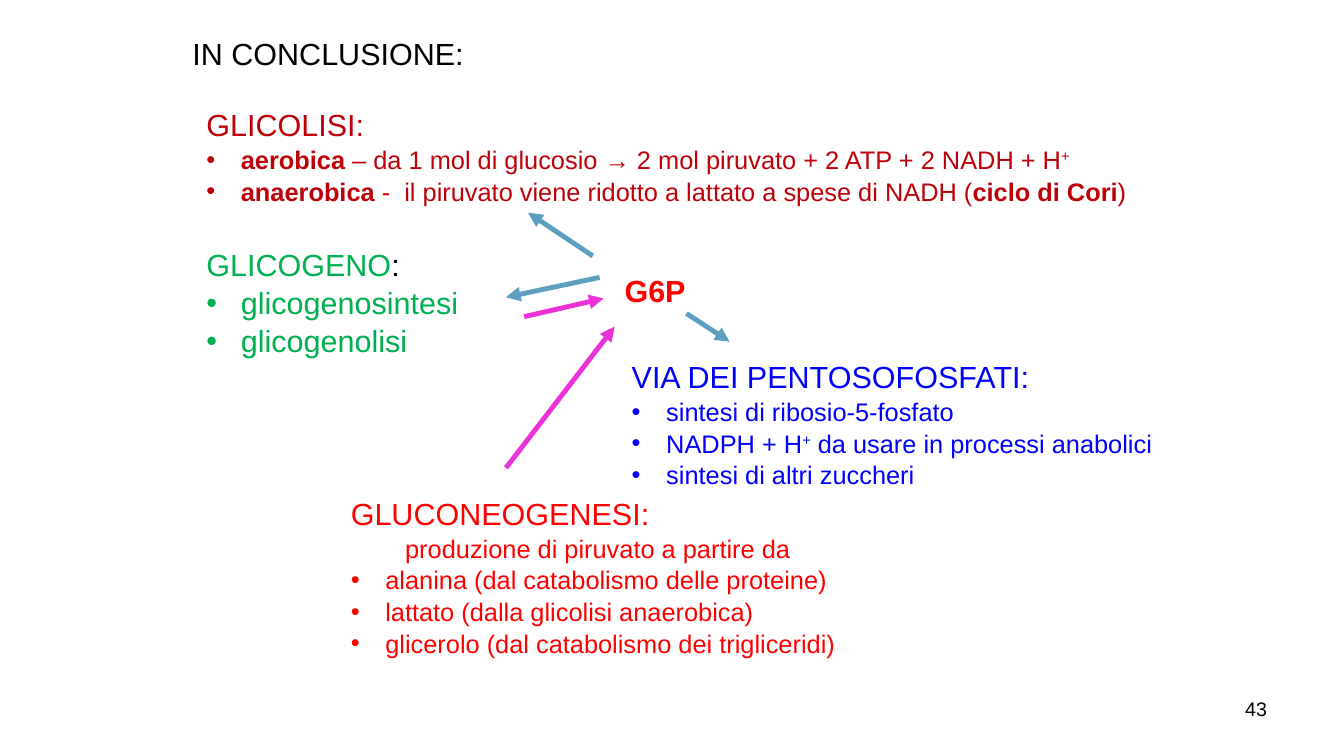
from lxml import etree
from pptx import Presentation
from pptx.dml.color import RGBColor
from pptx.enum.shapes import MSO_CONNECTOR
from pptx.enum.text import MSO_ANCHOR, MSO_AUTO_SIZE, PP_ALIGN
from pptx.oxml.ns import qn
from pptx.util import Cm, Pt

STRAIGHT = MSO_CONNECTOR.STRAIGHT
TOP = MSO_ANCHOR.TOP
NO_AUTOFIT = MSO_AUTO_SIZE.NONE
LEFT, RIGHT = PP_ALIGN.LEFT, PP_ALIGN.RIGHT

BLACK = RGBColor(0x00, 0x00, 0x00)
BLUE = RGBColor(0x00, 0x00, 0xFF)
DARK_RED = RGBColor(0xBE, 0x00, 0x09)
GREEN = RGBColor(0x00, 0xB0, 0x50)
RED = RGBColor(0xFF, 0x00, 0x00)
STEEL_BLUE = RGBColor(0x5C, 0x9F, 0xC0)
MAGENTA = RGBColor(0xEA, 0x32, 0xD8)

COMPARISON_LAYOUT = 4
HEADING_SIZE, LIST_SIZE, NUMBER_SIZE = 21.8, 18.1, 14
BULLET_INDENT = Cm(0.87)
FIRST_LINE_INDENT = Cm(1.37)

FRAME_FORMAT = {
    "word_wrap": True, "auto_size": NO_AUTOFIT, "vertical_anchor": TOP,
    "margin_left": Cm(0.25), "margin_right": Cm(0.25),
    "margin_top": Cm(0.2), "margin_bottom": Cm(0.13),
}
PARAGRAPH_FORMAT = {
    "alignment": LEFT, "line_spacing": 1.04,
    "space_before": Pt(0), "space_after": Pt(0),
}

PATHWAYS = [
    {"box": (4.95, 2.44, 25.45, 2.74), "color": DARK_RED, "size": LIST_SIZE,
     "heading": [("GLICOLISI:", {})],
     "items": [
         [("aerobica", {"bold": True}),
          (" – da 1 mol di glucosio → 2 mol piruvato + 2 ATP + 2 NADH + H", {}),
          ("+", {"superscript": True})],
         [("anaerobica ", {"bold": True}),
          ("-  il piruvato viene ridotto a lattato a spese di NADH (", {}),
          ("ciclo di Cori", {"bold": True}), (")", {})],
     ]},
    {"box": (4.95, 5.97, 7.8, 3.05), "color": GREEN, "size": HEADING_SIZE,
     "heading": [("GLICOGENO", {}), (":", {"color": BLACK})],
     "items": [[("glicogenosintesi", {})], [("glicogenolisi", {})]]},
    {"box": (15.67, 8.79, 13.79, 3.51), "color": BLUE, "size": LIST_SIZE,
     "heading": [("VIA DEI PENTOSOFOSFATI:", {})],
     "items": [
         [("sintesi di ribosio-5-fosfato", {})],
         [("NADPH + H", {}), ("+", {"superscript": True}),
          (" da usare in processi anabolici", {})],
         [("sintesi di altri zuccheri", {})],
     ]},
    {"box": (8.59, 12.24, 12.85, 4.29), "color": RED, "size": LIST_SIZE,
     "heading": [("GLUCONEOGENESI:", {})],
     "intro": [("produzione di piruvato a partire da", {})],
     "items": [
         [("alanina (dal catabolismo delle proteine)", {})],
         [("lattato (dalla glicolisi anaerobica)", {})],
         [("glicerolo (dal catabolismo dei trigliceridi)", {})],
     ]},
]

ARROWS = [
    ((15.11, 6.99), (12.75, 7.49), STEEL_BLUE),
    ((14.94, 6.45), (13.31, 5.36), STEEL_BLUE),
    ((17.3, 7.9), (18.39, 8.61), STEEL_BLUE),
    ((13.21, 7.98), (15.21, 7.52), MAGENTA),
    ((12.75, 11.79), (15.49, 8.23), MAGENTA),
]


def apply_format(target, values):
    for name, value in values.items():
        setattr(target, name, value)


def place(shape, box):
    lengths = [Cm(value) for value in box]
    apply_format(shape, dict(zip(("left", "top", "width", "height"), lengths)))
    apply_format(shape.text_frame, FRAME_FORMAT)


def write_runs(paragraph, runs, size, color):
    for text, style in runs:
        run = paragraph.add_run()
        run.text = text
        apply_format(run.font, {"name": "Arial", "size": Pt(size),
                                "bold": style.get("bold", False)})
        run.font.color.rgb = style.get("color", color)
        if style.get("superscript"):
            run._r.get_or_add_rPr().set("baseline", "30000")


def format_paragraph(paragraph, bullet=False, first_line=0, alignment=LEFT):
    apply_format(paragraph, {**PARAGRAPH_FORMAT, "alignment": alignment})
    properties = paragraph._p.get_or_add_pPr()
    properties.set("marL", str(BULLET_INDENT if bullet else 0))
    properties.set("indent", str(-BULLET_INDENT if bullet else first_line))
    if bullet:
        etree.SubElement(properties, qn("a:buFont")).set("typeface", "Arial")
        etree.SubElement(properties, qn("a:buChar")).set("char", "•")
    else:
        etree.SubElement(properties, qn("a:buNone"))


def fill_line(shape, box, runs, size, color, alignment=LEFT):
    place(shape, box)
    paragraph = shape.text_frame.paragraphs[0]
    format_paragraph(paragraph, alignment=alignment)
    write_runs(paragraph, runs, size, color)


def fill_pathway(placeholder, pathway):
    color, size = pathway["color"], pathway["size"]
    fill_line(placeholder, pathway["box"], pathway["heading"], HEADING_SIZE, color)
    text_frame = placeholder.text_frame
    if "intro" in pathway:
        paragraph = text_frame.add_paragraph()
        format_paragraph(paragraph, first_line=FIRST_LINE_INDENT)
        write_runs(paragraph, pathway["intro"], size, color)
    for runs in pathway["items"]:
        paragraph = text_frame.add_paragraph()
        format_paragraph(paragraph, bullet=True)
        write_runs(paragraph, runs, size, color)


def add_label(slide, box, runs, size, color, alignment=LEFT):
    shape = slide.shapes.add_textbox(*[Cm(value) for value in box])
    fill_line(shape, box, runs, size, color, alignment)


def add_arrow(slide, start, end, color):
    points = [Cm(value) for value in (*start, *end)]
    connector = slide.shapes.add_connector(STRAIGHT, *points)
    connector.line.width = Pt(3.5)
    connector.line.color.rgb = color
    properties = connector._element.spPr
    line = properties.find(qn("a:ln"))
    etree.SubElement(line, qn("a:tailEnd")).set("type", "triangle")
    etree.SubElement(properties, qn("a:effectLst"))


def main():
    presentation = Presentation()
    presentation.slide_width = Cm(33.87)
    presentation.slide_height = Cm(19.05)
    layout = presentation.slide_layouts[COMPARISON_LAYOUT]
    slide = presentation.slides.add_slide(layout)
    title, *bodies = slide.placeholders

    fill_line(title, (4.6, 0.64, 8.89, 1.19),
              [("IN CONCLUSIONE:", {})], HEADING_SIZE, BLACK)
    for body, pathway in zip(bodies, PATHWAYS):
        fill_pathway(body, pathway)
    add_label(slide, (15.49, 6.63, 2.54, 1.19),
              [("G6P", {"bold": True})], HEADING_SIZE, RED)
    add_label(slide, (24.28, 17.35, 7.9, 1.32),
              [("43", {})], NUMBER_SIZE, BLACK, RIGHT)
    for start, end, color in ARROWS:
        add_arrow(slide, start, end, color)

    presentation.save("out.pptx")


if __name__ == "__main__":
    main()
